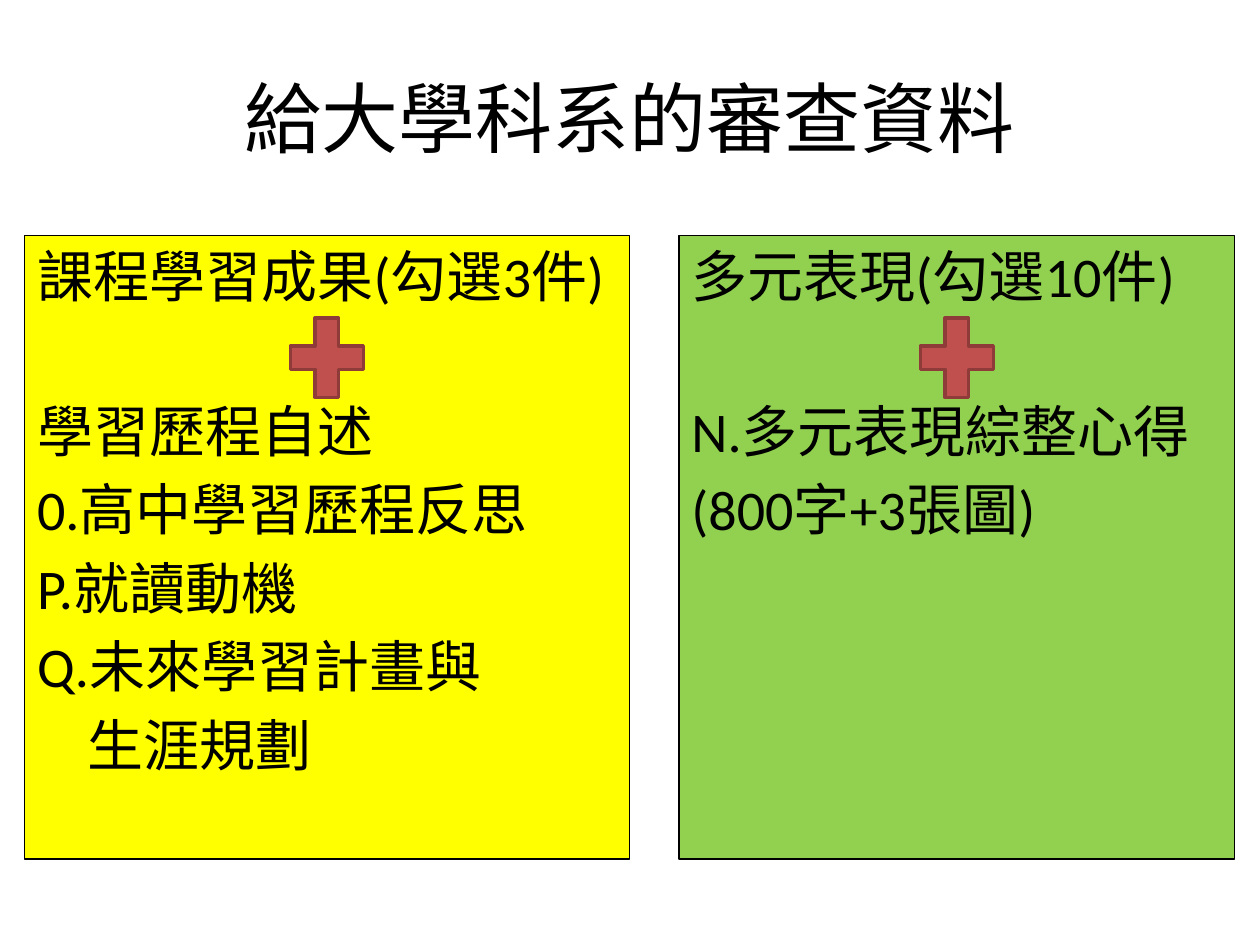
from pptx import Presentation
from pptx.dml.color import RGBColor
from pptx.enum.shapes import MSO_SHAPE as Shape
from pptx.enum.text import MSO_ANCHOR as Anchor, PP_ALIGN as Align
from pptx.util import Cm, Pt

BLACK = RGBColor(0x00, 0x00, 0x00)
YELLOW = RGBColor(0xFF, 0xFF, 0x00)
GREEN = RGBColor(0x92, 0xD0, 0x50)
RED = RGBColor(0xC0, 0x50, 0x4D)
DARK_RED = RGBColor(0x8E, 0x3B, 0x39)
LINE_GAP = 6.4
SECTION_GAP = 50


def add_text(paragraph, text, size):
    run = paragraph.add_run()
    run.text = text
    run.font.name = "Calibri"
    run.font.size = Pt(size)
    run.font.color.rgb = BLACK


def add_figure(kind, left, top, width, height, fill, line, weight):
    figure = slide.shapes.add_shape(kind, Cm(left), Cm(top), Cm(width), Cm(height))
    figure.shadow.inherit = False
    figure.fill.solid()
    figure.fill.fore_color.rgb = fill
    figure.line.color.rgb = line
    figure.line.width = Pt(weight)
    return figure


prs = Presentation()
prs.slide_width, prs.slide_height = Cm(25.4), Cm(19.05)
slide = prs.slides.add_slide(prs.slide_layouts[6])

heading = slide.shapes.add_textbox(Cm(1.27), Cm(0.76), Cm(22.86), Cm(3.18)).text_frame
heading.word_wrap = True
heading.vertical_anchor = Anchor.MIDDLE
heading.paragraphs[0].alignment = Align.CENTER
add_text(heading.paragraphs[0], "給大學科系的審查資料", 44)

panels = [
    (13.69, 11.2, GREEN, [
        ("多元表現(勾選10件)", 0, 0),
        ("N.多元表現綜整心得", SECTION_GAP, 0),
        ("(800字+3張圖)", LINE_GAP, 0),
    ]),
    (0.5, 12.19, YELLOW, [
        ("課程學習成果(勾選3件)", 0, 0),
        ("學習歷程自述", SECTION_GAP, 0),
        ("0.高中學習歷程反思", LINE_GAP, 0),
        ("P.就讀動機", LINE_GAP, 0),
        ("Q.未來學習計畫與", LINE_GAP, 0),
        ("生涯規劃", LINE_GAP, 1.02),
    ]),
]
for left, width, fill, lines in panels:
    panel = add_figure(Shape.RECTANGLE, left, 4.75, width, 12.57, fill, BLACK, 0.75)
    body = panel.text_frame
    body.word_wrap = True
    body.vertical_anchor = Anchor.TOP
    for index, (text, gap, indent) in enumerate(lines):
        paragraph = body.add_paragraph() if index else body.paragraphs[0]
        paragraph.alignment = Align.LEFT
        paragraph.space_before = Pt(gap)
        if indent:
            paragraph._p.get_or_add_pPr().set("marL", str(Cm(indent)))
        add_text(paragraph, text, 32)

for plus_left in (5.59, 18.29):
    add_figure(Shape.MATH_PLUS, plus_left, 6.12, 2, 2.18, RED, DARK_RED, 2)

prs.save("out.pptx")
